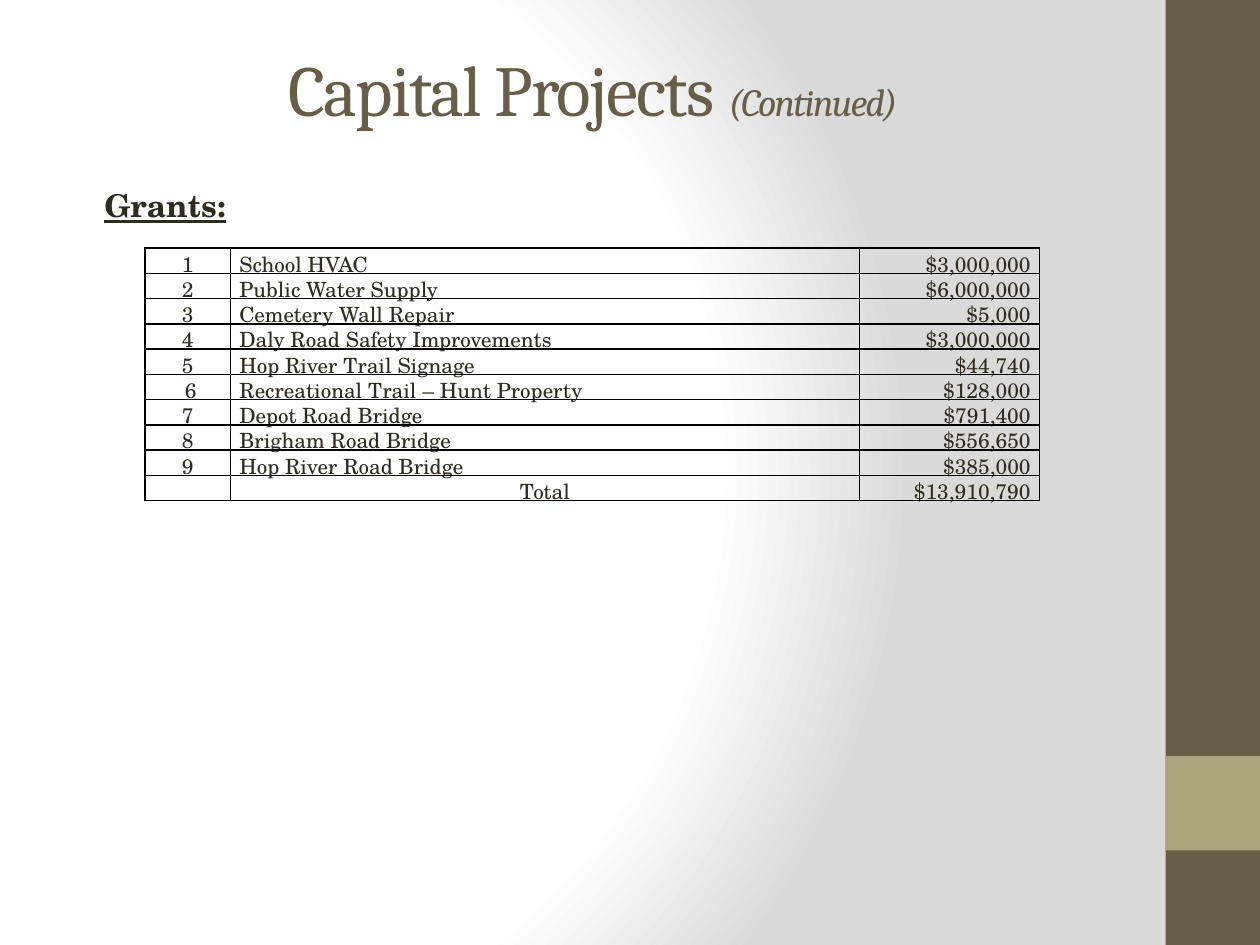
from dataclasses import dataclass
from typing import Any

from lxml.etree import SubElement
from pptx import Presentation
from pptx.dml.color import RGBColor
from pptx.enum.shapes import MSO_SHAPE as Shape
from pptx.enum.text import MSO_ANCHOR as Anchor, PP_ALIGN as Align
from pptx.oxml import parse_xml
from pptx.oxml.ns import nsdecls, qn
from pptx.util import Inches, Pt

COLUMNS, ROWS = 40, 30
GRANTS = [
    ("1", "School HVAC", "$3,000,000"),
    ("2", "Public Water Supply", "$6,000,000"),
    ("3", "Cemetery Wall Repair", "$5,000"),
    ("4", "Daly Road Safety Improvements", "$3,000,000"),
    ("5", "Hop River Trail Signage", "$44,740"),
    (" 6", "Recreational Trail – Hunt Property", "$128,000"),
    ("7", "Depot Road Bridge", "$791,400"),
    ("8", "Brigham Road Bridge", "$556,650"),
    ("9", "Hop River Road Bridge", "$385,000"),
    ("", "Total", "$13,910,790"),
]


def color(value):
    return RGBColor.from_string(value)


@dataclass
class SlideBuilder:
    slide: Any
    width: int
    height: int
    heading_font: str = "Cambria"
    body_font: str = "TeX Gyre Schola"
    accent: str = "675E47"
    highlight: str = "A9A57C"
    ink: str = "2F2B20"
    border: str = "000000"

    def place(self, left, top, columns, rows):
        x, y = self.width / COLUMNS, self.height / ROWS
        return round(left * x), round(top * y), round(columns * x), round(rows * y)

    def background(self, stops, center):
        stop_xml = "".join(
            f'<a:gs pos="{share * 1000}"><a:srgbClr val="{value}"/></a:gs>'
            for share, value in stops
        )
        edges = " ".join(f'{side}="{share * 1000}"' for side, share in zip("ltrb", center))
        fill = self.slide.background.fill
        fill.solid()
        properties = self.slide._element.cSld.find(qn("p:bg")).find(qn("p:bgPr"))
        gradient = parse_xml(
            f'<a:gradFill {nsdecls("a")} rotWithShape="1"><a:gsLst>{stop_xml}</a:gsLst>'
            f'<a:path path="circle"><a:fillToRect {edges}/></a:path></a:gradFill>'
        )
        properties.replace(properties.find(qn("a:solidFill")), gradient)

    def band(self, area, fill):
        shape = self.slide.shapes.add_shape(Shape.RECTANGLE, *self.place(*area))
        shape.shadow.inherit = False
        shape.fill.solid()
        shape.fill.fore_color.rgb = color(fill)
        shape.line.fill.background()

    def style(self, run, font, size, fill):
        run.font.name = font
        run.font.size = Pt(size)
        run.font.color.rgb = color(fill)

    def text_box(self, area):
        text_frame = self.slide.shapes.add_textbox(*self.place(*area)).text_frame
        text_frame.word_wrap = True
        return text_frame

    def title(self, area, main, suffix):
        text_frame = self.text_box(area)
        text_frame.vertical_anchor = Anchor.MIDDLE
        text_frame.text = main
        paragraph = text_frame.paragraphs[0]
        paragraph.alignment = Align.CENTER
        paragraph.add_run().text = suffix
        for run, size in zip(paragraph.runs, (41, 22)):
            self.style(run, self.heading_font, size, self.accent)
            run.font._element.set("spc", "-100")
        paragraph.runs[1].font.italic = True

    def subheading(self, area, text):
        text_frame = self.text_box(area)
        text_frame.text = text
        run = text_frame.paragraphs[0].runs[0]
        self.style(run, self.body_font, 18, self.ink)
        run.font.bold = run.font.underline = True

    def cell(self, cell, text, alignment):
        cell.margin_left = cell.margin_right = Inches(0.07)
        cell.margin_top = cell.margin_bottom = 0
        cell.text_frame.text = text
        paragraph = cell.text_frame.paragraphs[0]
        paragraph.alignment = alignment
        for run in paragraph.runs:
            self.style(run, self.body_font, 12, self.ink)
        if not text:
            SubElement(paragraph._p, qn("a:endParaRPr"), sz="1200")
        properties = cell._tc.get_or_add_tcPr()
        for side in ("lnL", "lnR", "lnT", "lnB"):
            properties.append(parse_xml(
                f'<a:{side} {nsdecls("a")} w="{Pt(1)}"><a:solidFill>'
                f'<a:srgbClr val="{self.border}"/></a:solidFill></a:{side}>'
            ))
        cell.fill.background()

    def table(self, area, widths, records):
        place = self.place(*area)
        frame = self.slide.shapes.add_table(len(records), len(widths), *place)
        table = frame.table
        table.first_row = table.horz_banding = False
        for column, width in zip(table.columns, widths):
            column.width = self.place(0, 0, width, 0)[2]
        for row, record in zip(table.rows, records):
            row.height = 0
            alignments = (Align.CENTER, Align.LEFT if record[0] else Align.CENTER, Align.RIGHT)
            for cell, text, alignment in zip(row.cells, record, alignments):
                self.cell(cell, text, alignment)
        frame.height = place[3]


def main():
    presentation = Presentation()
    presentation.slide_width, presentation.slide_height = Inches(10), Inches(7.5)
    slide = presentation.slides.add_slide(presentation.slide_layouts[6])
    builder = SlideBuilder(slide, presentation.slide_width, presentation.slide_height)
    builder.background([(0, "FFFFFF"), (75, "FFFFFF"), (100, "DADADA")], (20, 50, 100, 50))
    builder.band((37, 0, 3, ROWS), builder.accent)
    builder.band((37, 24, 3, 3), builder.highlight)
    builder.title((2.32, 1.44, 33, 2.68), "Capital Projects ", "(Continued)")
    builder.subheading((2.92, 5.72, 6.8, 1.6), "Grants:")
    builder.table((4.6, 7.88, 28.4, 8), (2.72, 19.96, 5.72), GRANTS)
    presentation.save("out.pptx")


if __name__ == "__main__":
    main()
